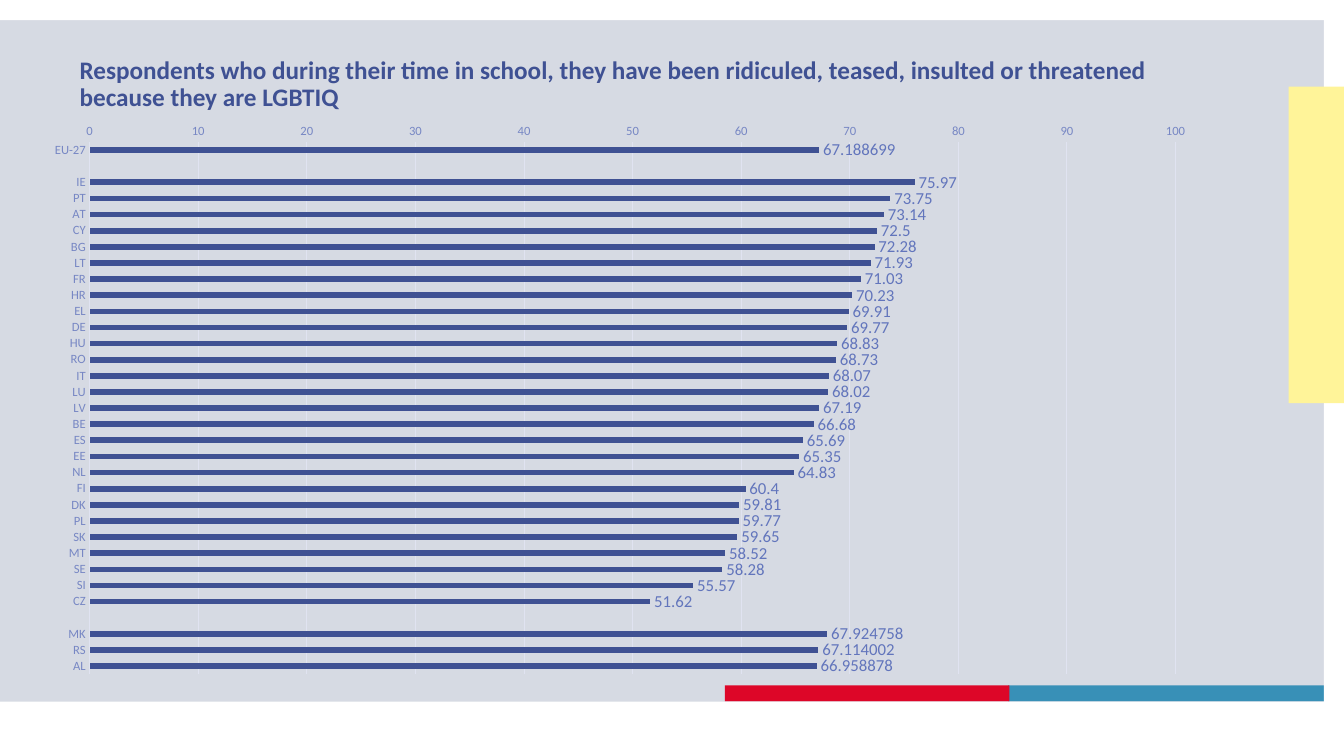
"""Build a slide charting school ridicule of LGBTIQ respondents by country."""
from dataclasses import dataclass

import pptx
import pptx.chart.data
import pptx.dml.color
import pptx.enum.chart
import pptx.enum.shapes
import pptx.enum.text
import pptx.util
from lxml import etree

PX = 9144
FONT = "Calibri"
NAVY, AXIS, LABEL, GRID = "3F5193", "7787C4", "6275BC", "E0E3F1"


@dataclass
class Box:
    left: int
    top: int
    width: int
    height: int

    def emu(self) -> tuple[int, ...]:
        return tuple(n * PX for n in (self.left, self.top, self.width, self.height))


@dataclass
class Band:
    box: Box
    color: str


BANDS = [
    Band(Box(1000, 680, 314, 16), "3890B7"),
    Band(Box(719, 680, 282, 16), "DD0628"),
    Band(Box(0, 0, 1333, 20), "FFFFFF"),
    Band(Box(1313, 0, 20, 729), "FFFFFF"),
    Band(Box(0, 696, 1333, 54), "FFFFFF"),
    Band(Box(1278, 86, 55, 314), "FFF499"),
]
TITLE = ("Respondents who during their time in school, they have been ridiculed, "
         "teased, insulted or threatened because they are LGBTIQ")
TITLE_BOX = Box(79, 29, 1120, 82)
CHART_BOX = Box(31, 111, 1168, 570)
PLOT_BOX = Box(89, 141, 1077, 528)
SHARES = [
    ("EU-27", 67.188699), ("", None),
    ("IE", 75.97), ("PT", 73.75), ("AT", 73.14), ("CY", 72.5), ("BG", 72.28),
    ("LT", 71.93), ("FR", 71.03), ("HR", 70.23), ("EL", 69.91), ("DE", 69.77),
    ("HU", 68.83), ("RO", 68.73), ("IT", 68.07), ("LU", 68.02), ("LV", 67.19),
    ("BE", 66.68), ("ES", 65.69), ("EE", 65.35), ("NL", 64.83), ("FI", 60.4),
    ("DK", 59.81), ("PL", 59.77), ("SK", 59.65), ("MT", 58.52), ("SE", 58.28),
    ("SI", 55.57), ("CZ", 51.62), ("", None),
    ("MK", 67.924758), ("RS", 67.114002), ("AL", 66.958878),
]


def rgb(color: str) -> pptx.dml.color.RGBColor:
    return pptx.dml.color.RGBColor.from_string(color)


def set_font(font, size: int, color: str, bold: bool = False) -> None:
    font.name = FONT
    font.size = pptx.util.Pt(size)
    font.bold = bold
    font.color.rgb = rgb(color)


def set_line(line, color: str) -> None:
    line.color.rgb = rgb(color)
    line.width = pptx.util.Pt(0.75)


def add_band(s, band: Band) -> None:
    sp = s.shapes.add_shape(pptx.enum.shapes.MSO_SHAPE.RECTANGLE, *band.box.emu())
    sp.shadow.inherit = False
    sp.fill.solid()
    sp.fill.fore_color.rgb = rgb(band.color)
    sp.line.fill.background()


def set_title(s) -> None:
    sp = s.shapes.title
    sp.left, sp.top, sp.width, sp.height = TITLE_BOX.emu()
    tf = sp.text_frame
    tf.text = TITLE
    tf.word_wrap = True
    tf.auto_size = pptx.enum.text.MSO_AUTO_SIZE.NONE
    tf.vertical_anchor = pptx.enum.text.MSO_ANCHOR.BOTTOM
    tf.margin_left = tf.margin_top = tf.margin_right = tf.margin_bottom = 0
    p = tf.paragraphs[0]
    p.alignment = pptx.enum.text.PP_ALIGN.LEFT
    p.line_spacing = 0.9
    set_font(p.runs[0].font, 18, NAVY, bold=True)


def place_plot(chart, outer: Box, inner: Box) -> None:
    area = chart.plots[0]._element.getparent()
    ns = area.nsmap["c"]
    for old in area.findall(f"{{{ns}}}layout"):
        area.remove(old)
    layout = etree.Element(f"{{{ns}}}layout")
    manual = etree.SubElement(layout, f"{{{ns}}}manualLayout")
    settings = {
        "layoutTarget": "inner", "xMode": "edge", "yMode": "edge",
        "x": (inner.left - outer.left) / outer.width,
        "y": (inner.top - outer.top) / outer.height,
        "w": inner.width / outer.width,
        "h": inner.height / outer.height,
    }
    for tag, value in settings.items():
        etree.SubElement(manual, f"{{{ns}}}{tag}", val=str(value))
    area.insert(0, layout)


def add_share_chart(s) -> None:
    data = pptx.chart.data.CategoryChartData()
    data.categories = [country for country, _ in SHARES]
    data.add_series("Series 1", [share for _, share in SHARES])
    kind = pptx.enum.chart.XL_CHART_TYPE.BAR_CLUSTERED
    chart = s.shapes.add_chart(kind, *CHART_BOX.emu(), data).chart
    chart.has_legend = False
    chart.has_title = False
    set_font(chart.font, 10, NAVY)

    plot = chart.plots[0]
    plot.gap_width = 182
    plot.vary_by_categories = False
    fill = plot.series[0].format.fill
    fill.solid()
    fill.fore_color.rgb = rgb(NAVY)
    plot.has_data_labels = True
    labels = plot.data_labels
    labels.show_value = True
    labels.position = pptx.enum.chart.XL_LABEL_POSITION.OUTSIDE_END
    set_font(labels.font, 12, LABEL)

    for axis in (chart.category_axis, chart.value_axis):
        axis.major_tick_mark = pptx.enum.chart.XL_TICK_MARK.NONE
        axis.minor_tick_mark = pptx.enum.chart.XL_TICK_MARK.NONE
        set_font(axis.tick_labels.font, 9, AXIS)
    chart.category_axis.reverse_order = True
    set_line(chart.category_axis.format.line, GRID)
    axis = chart.value_axis
    axis.minimum_scale, axis.maximum_scale, axis.major_unit = 0, 100, 10
    axis.format.line.fill.background()
    axis.has_major_gridlines = True
    set_line(axis.major_gridlines.format.line, GRID)
    place_plot(chart, CHART_BOX, PLOT_BOX)


def main() -> None:
    prs = pptx.Presentation()
    prs.slide_width, prs.slide_height = 1333 * PX, 750 * PX
    s = prs.slides.add_slide(prs.slide_layouts.get_by_name("Title Only"))
    s.background.fill.solid()
    s.background.fill.fore_color.rgb = rgb("D6DAE3")
    for band in BANDS:
        add_band(s, band)
    set_title(s)
    add_share_chart(s)
    prs.save("out.pptx")


if __name__ == "__main__":
    main()
